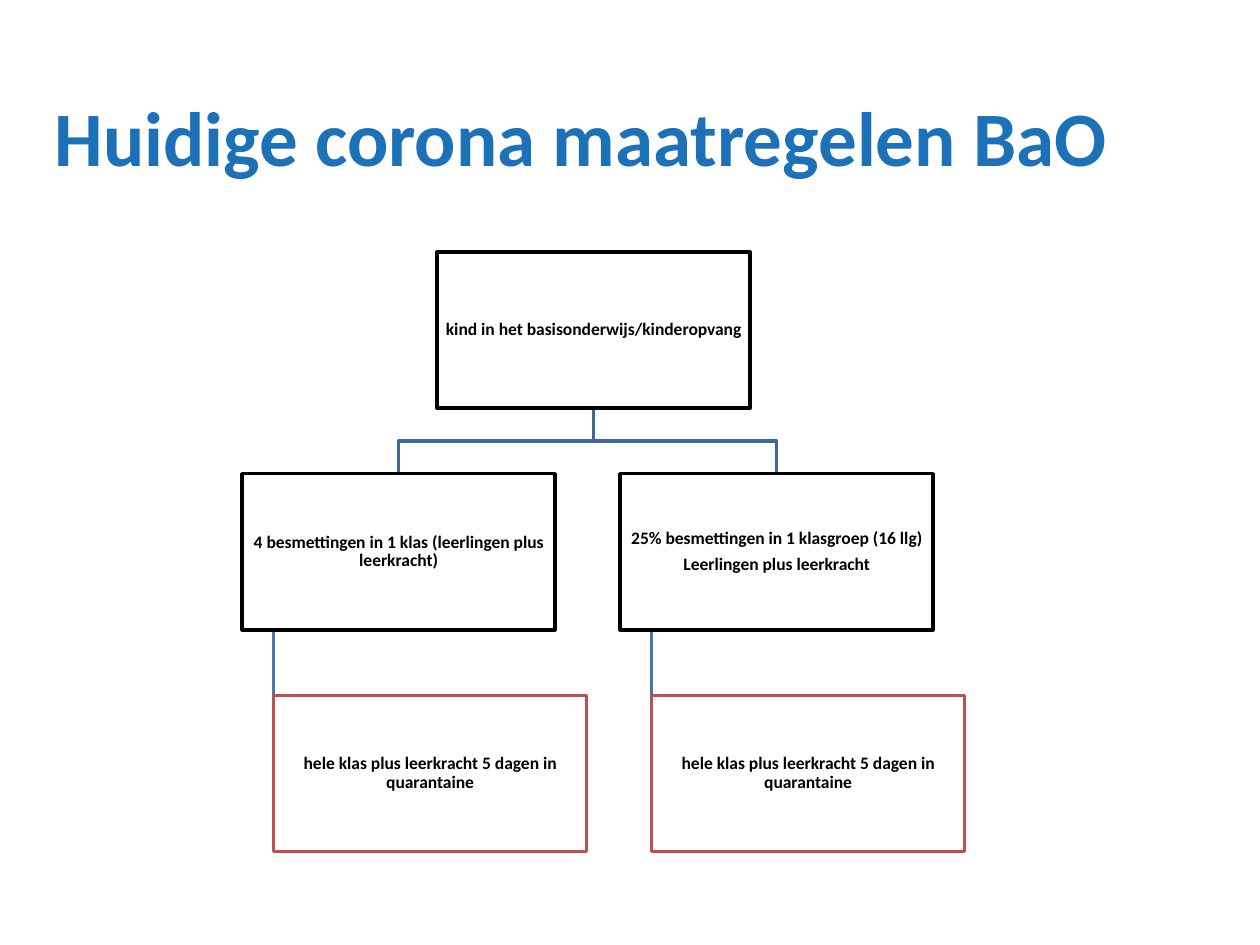
from pptx import Presentation
from pptx.dml.color import RGBColor
from pptx.enum import shapes, text
from pptx.util import Pt

COLORS = {"title": "1D71B8", "text": "000000", "box": "FFFFFF", "measure": "C0504D",
          "branch": "3F6797", "drop": "4875AC"}
BOX_W, BOX_H = 178.8, 89.3
LEVEL_PITCH = 126.7
BRANCH_PITCH = 216
LEAF_INDENT = 18
MEASURE = "hele klas plus leerkracht 5 dagen in quarantaine"
BRANCHES = [
    ["4 besmettingen in 1 klas (leerlingen plus leerkracht)"],
    ["25% besmettingen in 1 klasgroep (16 llg)", "Leerlingen plus leerkracht"],
]


def rgb(name):
    return RGBColor.from_string(COLORS[name])


def write(frame, lines, size, color, align, inset=None, space_after=0):
    frame.word_wrap = True
    frame.auto_size = text.MSO_AUTO_SIZE.NONE
    frame.vertical_anchor = text.MSO_ANCHOR.MIDDLE
    if inset is not None:
        frame.margin_left = frame.margin_right = Pt(inset)
        frame.margin_top = frame.margin_bottom = Pt(inset)
    for number, line in enumerate(lines):
        paragraph = frame.paragraphs[0] if number == 0 else frame.add_paragraph()
        paragraph.alignment = align
        paragraph.line_spacing = 0.9
        paragraph.space_before = Pt(0)
        paragraph.space_after = Pt(space_after)
        run = paragraph.add_run()
        run.text = line
        run.font.name = "Calibri"
        run.font.size = Pt(size)
        run.font.bold = True
        run.font.color.rgb = rgb(color)


def add_title(slide, left, top, width, height):
    title = slide.shapes.title
    title.left, title.top = Pt(left), Pt(top)
    title.width, title.height = Pt(width), Pt(height)
    write(title.text_frame, ["Huidige corona maatregelen BaO"], size=44, color="title",
          align=text.PP_ALIGN.LEFT)


def add_link(slide, points, color):
    (start_x, start_y), *rest = [(Pt(x), Pt(y)) for x, y in points]
    builder = slide.shapes.build_freeform(start_x, start_y)
    builder.add_line_segments(rest, close=False)
    link = builder.convert_to_shape()
    link.shadow.inherit = False
    link.fill.background()
    link.line.color.rgb = rgb(color)
    link.line.width = Pt(2)


def add_node(slide, left, top, lines, outline="text"):
    node = slide.shapes.add_shape(shapes.MSO_SHAPE.RECTANGLE,
                                  Pt(left), Pt(top), Pt(BOX_W), Pt(BOX_H))
    node.shadow.inherit = False
    node.fill.solid()
    node.fill.fore_color.rgb = rgb("box")
    node.line.color.rgb = rgb(outline)
    node.line.width = Pt(2)
    write(node.text_frame, lines, size=10, color="text", align=text.PP_ALIGN.CENTER,
          inset=0.7, space_after=3.5)


def add_tree(slide, left, top, root_offset):
    """Links go first, so that the boxes cover their ends."""
    root_left = left + root_offset
    root_x, root_bottom = root_left + BOX_W / 2, top + BOX_H
    branch_top, leaf_top = top + LEVEL_PITCH, top + 2 * LEVEL_PITCH
    middle = (root_bottom + branch_top) / 2
    lefts = [left + number * BRANCH_PITCH for number in range(len(BRANCHES))]

    for branch_left in lefts:
        branch_x = branch_left + BOX_W / 2
        leaf_left = branch_left + LEAF_INDENT
        add_link(slide, [(root_x, root_bottom), (root_x, middle),
                         (branch_x, middle), (branch_x, branch_top)], "branch")
        add_link(slide, [(leaf_left, branch_top + BOX_H),
                         (leaf_left, leaf_top + BOX_H / 2)], "drop")

    add_node(slide, root_left, top, ["kind in het basisonderwijs/kinderopvang"])
    for branch_left, lines in zip(lefts, BRANCHES):
        add_node(slide, branch_left, branch_top, lines)
        add_node(slide, branch_left + LEAF_INDENT, leaf_top, [MEASURE], outline="measure")


def main():
    deck = Presentation()
    deck.slide_width, deck.slide_height = Pt(720), Pt(540)
    slide = deck.slides.add_slide(deck.slide_layouts[5])
    add_title(slide, left=24, top=29, width=669, height=104)
    add_tree(slide, left=138.4, top=144, root_offset=111.4)
    deck.save("out.pptx")


if __name__ == "__main__":
    main()
